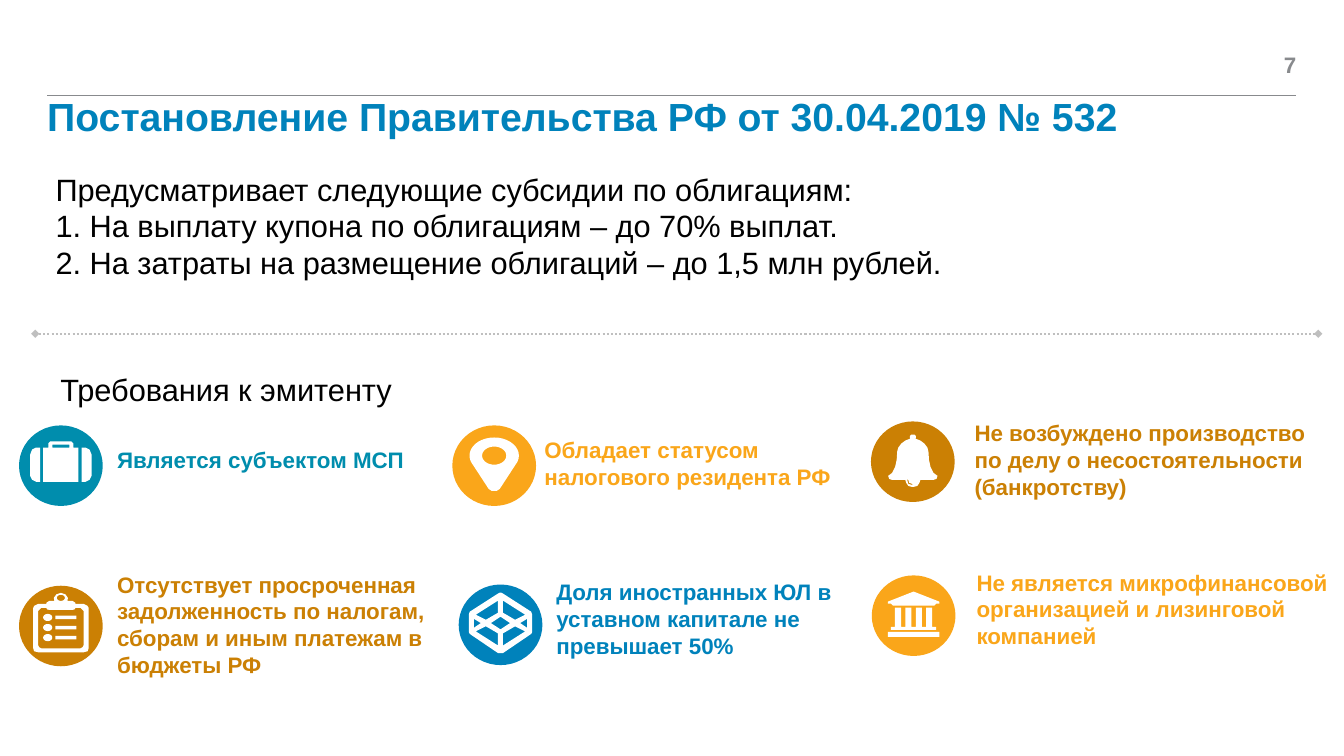
from math import cos, radians, sin
from lxml.etree import SubElement
from pptx import Presentation
from pptx.dml.color import RGBColor
from pptx.enum.dml import MSO_LINE_DASH_STYLE as Dash
from pptx.enum.shapes import MSO_CONNECTOR as Link, MSO_SHAPE as Kind
from pptx.enum.text import MSO_ANCHOR as Anchor, MSO_AUTO_SIZE as Fit, PP_ALIGN as Align
from pptx.oxml.ns import qn
from pptx.util import Cm, Pt

WHITE = RGBColor(0xFF, 0xFF, 0xFF)
BLACK = RGBColor(0, 0, 0)
GREY = RGBColor(0x88, 0x8A, 0x8D)
SILVER = RGBColor(0xBF, 0xBF, 0xBF)
BLUE = RGBColor(0x00, 0x82, 0xBB)
TEAL = RGBColor(0x00, 0x8D, 0xAD)
AMBER = RGBColor(0xFA, 0xA6, 0x1A)
BROWN = RGBColor(0xCB, 0x80, 0x04)
STEP = Cm(2.54) / 100
AXIS = 41.5


def arc(x, y, rx, ry, start=0, end=360):
    span = range(start, end + 1, 10)
    return [(x + rx * cos(radians(a)), y + ry * sin(radians(a))) for a in span]


def box(x, y, w, h):
    return [(x, y), (x + w, y), (x + w, y + h), (x, y + h)]


def flip(loop):
    return [(2 * AXIS - x, y) for x, y in loop]


def twin(half):
    return half + flip(half)[::-1]


def case():
    side = [(21, 56), (17, 56), (13, 54), (11, 50), (11, 29), (13, 24), (17, 22), (21, 22)]
    bag = [(24, 56), (24, 22), (29, 22), (29, 18), (31, 16)]
    return [[side, flip(side), twin(bag), box(33, 19, 17, 3)]]


def pin():
    drop = arc(AXIS, 30, 24.5, 18, 160, 380) + [(47, 63), (44, 65), (39, 65), (36, 63)]
    return [[drop, arc(AXIS, 30, 12, 9)]]


def bell():
    half = [(40, 13), (38.5, 14.5), (38.5, 16), (39, 17), (34, 19), (30, 22), (27, 26),
            (26, 30), (25.5, 38), (24, 45), (21, 51), (17, 54), (18, 57), (21, 58),
            (34, 58), (35, 61), (37, 64), (41, 65)]
    shine = [(41, 62), (38, 61), (37, 58), (36, 57), (36, 58), (37, 62), (41, 63)]
    return [[twin(half), shine]]


def board():
    rim = [(41.5, 7), (37, 8.5), (34.5, 12), (35, 15), (30, 15), (27, 17), (27, 18),
           (19, 18), (15, 20), (14, 22), (14, 62), (15, 65), (19, 66)]
    page = [(30, 24), (28, 23.5), (27, 22), (22, 22), (19, 25), (19, 59), (20, 61), (22, 62)]
    rows = [[arc(28.5, y, 4.5, 3.5), box(36, y - 1.75, 21, 3.5)] for y in (31.5, 41.5, 51.5)]
    return [[twin(rim), twin(page), arc(AXIS, 12, 4, 3)]] + rows


def gem():
    rim = [(41, 8), (39, 9), (11, 27), (10, 30), (10, 47), (11, 49), (39, 68)]
    top = [(39, 28), (39, 16), (17, 30), (27, 35)]
    low = [(x, 76.5 - y) for x, y in top]
    wing = [(22, 38.25), (15, 34), (15, 43)]
    core = [(51, 38.25), (AXIS, 32), (32, 38.25), (AXIS, 44.5)]
    cuts = [part for half in (top, low, wing) for part in (half, flip(half))]
    return [[twin(rim), core] + cuts]


def bank():
    roof = [(AXIS, 16), (16, 26), (16, 28), (19, 28), (21, 30)]
    posts = [box(23 + 10.33 * i, 32, 6, 19) for i in range(4)]
    return [[twin(roof), box(19, 51, 45, 3), box(16, 56, 51, 5)] + posts]


ITEMS = [
    ("Является субъектом МСП", TEAL, case, (0.48, 10.72), (2.95, 11.23, 7.42, 0.69)),
    ("Обладает статусом налогового резидента РФ", AMBER, pin,
     (11.4, 10.72), (13.72, 11, 8.51, 1.37)),
    ("Не возбуждено производство по делу о несостоятельности (банкротству)", BROWN, bell,
     (21.95, 10.62), (24.56, 10.57, 9.07, 2.06)),
    ("Отсутствует просроченная задолженность по налогам, сборам и иным платежам в бюджеты РФ",
     BROWN, board, (0.48, 14.76), (2.95, 14.38, 8.48, 2.74)),
    ("Доля иностранных ЮЛ в уставном капитале не превышает 50%", BLUE, gem,
     (11.56, 14.73), (14.02, 14.58, 8.48, 2.06)),
    ("Не является микрофинансовой организацией и лизинговой компанией", AMBER, bank,
     (21.97, 14.5), (24.61, 14.33, 9.02, 2.06)),
]


def paint(shape, color):
    shape.shadow.inherit = False
    shape.fill.solid()
    shape.fill.fore_color.rgb = color
    shape.line.fill.background()


def draw(slide, loops, x, y):
    scaled = [[(px * STEP, py * STEP) for px, py in loop] for loop in loops]
    pen = slide.shapes.build_freeform(*scaled[0][0], scale=1.0)
    pen.add_line_segments(scaled[0][1:])
    for loop in scaled[1:]:
        pen.move_to(*loop[0])
        pen.add_line_segments(loop[1:])
    paint(pen.convert_to_shape(Cm(x), Cm(y)), WHITE)


def badge(slide, color, icon, x, y):
    disc = slide.shapes.add_shape(Kind.OVAL, Cm(x), Cm(y), Cm(2.11), Cm(2.03))
    paint(disc, color)
    for loops in icon():
        draw(slide, loops, x, y)


def style(shape, place, text, size, color, bold=False, align=Align.LEFT):
    shape.left, shape.top, shape.width, shape.height = map(Cm, place)
    frame = shape.text_frame
    frame.text = text
    frame.word_wrap = True
    frame.auto_size = Fit.NONE
    frame.vertical_anchor = Anchor.TOP
    frame.margin_left = frame.margin_right = frame.margin_top = frame.margin_bottom = 0
    for para in frame.paragraphs:
        para.alignment = align
        para.space_before = Pt(0)
        for run in para.runs:
            font = run.font
            font.name, font.size, font.bold = "Arial", Pt(size), bold
            font.color.rgb = color
    return frame


def label(slide, place, *args, **extra):
    return style(slide.shapes.add_textbox(0, 0, 0, 0), place, *args, **extra)


def rule(slide, x, y, end, color, width):
    line = slide.shapes.add_connector(Link.STRAIGHT, Cm(x), Cm(y), Cm(end), Cm(y))
    line.line.color.rgb = color
    line.line.width = Pt(width)
    SubElement(line._element.spPr, qn("a:effectLst"))
    return line


def divide(slide):
    line = rule(slide, 0.89, 8.41, 33.22, SILVER, 1.5).line
    line.dash_style = Dash.ROUND_DOT
    for tag in ("a:headEnd", "a:tailEnd"):
        SubElement(line._get_or_add_ln(), qn(tag), type="diamond")


def intro(slide):
    text = "\n".join((
        "Предусматривает следующие субсидии по облигациям:",
        "1. На выплату купона по облигациям – до 70% выплат.",
        "2. На затраты на размещение облигаций – до 1,5 млн рублей."))
    frame = style(slide.placeholders[1], (1.4, 4.29, 26.85, 2.82), text, 22, BLACK)
    for para in frame.paragraphs:
        props = para._p.get_or_add_pPr()
        props.set("marL", "0")
        props.set("indent", "0")
        SubElement(props, qn("a:buNone"))


def main():
    deck = Presentation()
    deck.slide_width, deck.slide_height = Cm(33.87), Cm(19.05)
    slide = deck.slides.add_slide(deck.slide_layouts[1])
    rule(slide, 1.19, 2.41, 32.66, GREY, 0.5)
    title = style(slide.shapes.title, (1.19, 2.46, 31.47, 1.19),
                  "Постановление Правительства РФ от 30.04.2019 № 532", 28, BLUE, bold=True)
    title.paragraphs[0].line_spacing = 0.9
    page = label(slide, (30.61, 1.19, 2.06, 0.89), "7", 16, GREY, bold=True, align=Align.RIGHT)
    page.vertical_anchor = Anchor.MIDDLE
    intro(slide)
    divide(slide)
    label(slide, (1.52, 9.35, 8.84, 0.94), "Требования к эмитенту", 22, BLACK)
    for text, color, icon, spot, place in ITEMS:
        badge(slide, color, icon, *spot)
        label(slide, place, text, 16, color, bold=True)
    deck.save("out.pptx")


if __name__ == "__main__":
    main()
